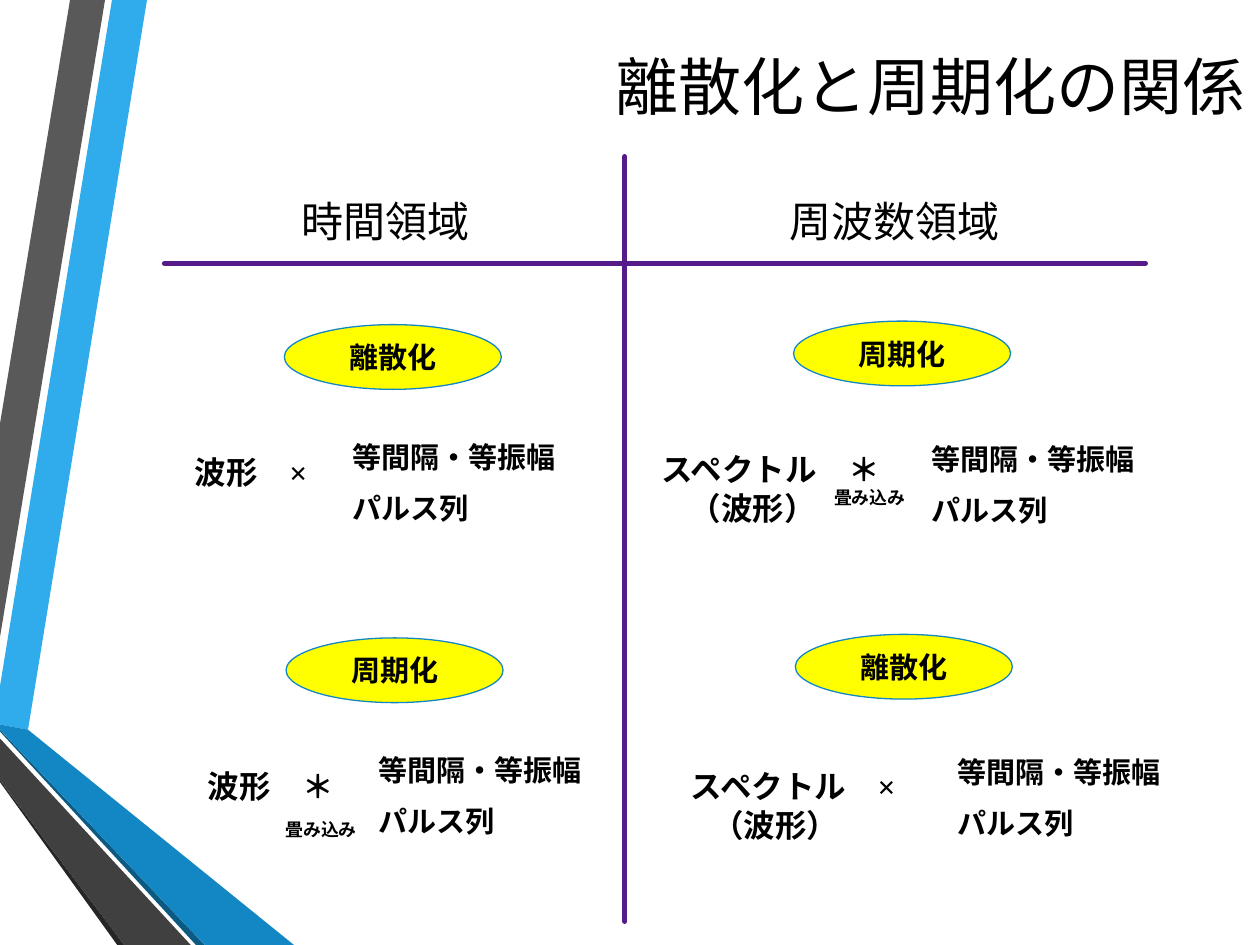
import pptx
import pptx.util
import pptx.dml.color
import pptx.enum.shapes
import pptx.enum.text
import pptx.oxml
import pptx.oxml.ns

Pt = pptx.util.Pt
RGB = pptx.dml.color.RGBColor
ALIGN = pptx.enum.text.PP_ALIGN
ANCHOR = pptx.enum.text.MSO_ANCHOR

BLACK = RGB(0x00, 0x00, 0x00)
YELLOW = RGB(0xFF, 0xFF, 0x00)
PURPLE = RGB(0x54, 0x1B, 0x89)
LIGHT_BLUE = RGB(0x30, 0xAC, 0xEC)
BLUE = RGB(0x12, 0x87, 0xC3)
DARK_BLUE = RGB(0x0C, 0x5A, 0x82)
GRAY = RGB(0x59, 0x59, 0x59)
DARK_GRAY = RGB(0x40, 0x40, 0x40)
NEAR_BLACK = RGB(0x26, 0x26, 0x26)

# Ribbon outlines on the left edge, back to front
RIBBONS = [
    (LIGHT_BLUE, [(0, 391.7), (0, 414), (16, 416.9), (84.4, 0), (64.2, 0)]),
    (GRAY, [(59.8, 0), (39.7, 0), (0, 242), (0, 364.3)]),
    (NEAR_BLACK, [(0, 445.5), (0, 447.3), (67, 540), (71.3, 540)]),
    (DARK_BLUE, [(0, 416.9), (0, 417.7), (112.4, 540), (117.3, 540)]),
    (BLUE, [(0, 416.9), (117.3, 540), (167.8, 540), (16, 416.9), (0, 414)]),
    (DARK_GRAY, [(0, 445.5), (71.3, 540), (108.7, 540), (0, 422)]),
]


def add_ribbon(s, color, points):
    fb = s.shapes.build_freeform(*points[0], scale=float(Pt(1)))
    fb.add_line_segments(points[1:], close=True)
    sp = fb.convert_to_shape()
    sp.shadow.inherit = False
    sp.fill.solid()
    sp.fill.fore_color.rgb = color
    sp.line.fill.background()


def write_text(sp, text, size, align, bold=True, font="Times New Roman"):
    tf = sp.text_frame
    tf.word_wrap = True
    tf.text = text
    for p in tf.paragraphs:
        p.alignment = align
        p.space_before = Pt(round(size * 0.2, 1))
        p.space_after = Pt(6)
        for r in p.runs:
            r.font.size = Pt(size)
            r.font.name = font
            r.font.bold = bold
            r.font.color.rgb = BLACK


def add_text(s, text, left, top, width, height, size, align=ALIGN.CENTER, **style):
    sp = s.shapes.add_textbox(Pt(left), Pt(top), Pt(width), Pt(height))
    write_text(sp, text, size, align, **style)
    return sp


def add_operation(s, text, left, top):
    sp = s.shapes.add_shape(pptx.enum.shapes.MSO_SHAPE.OVAL,
                            Pt(left), Pt(top), Pt(124), Pt(37))
    sp.shadow.inherit = False
    sp.fill.solid()
    sp.fill.fore_color.rgb = YELLOW
    sp.line.color.rgb = BLUE
    sp.line.width = Pt(0.75)
    write_text(sp, text, 16.6, ALIGN.CENTER)


def add_pulse_train(s, left, top):
    add_text(s, "等間隔・等振幅\nパルス列", left, top, 149, 52.5, 16.6, ALIGN.LEFT)


def add_convolution_label(s, left, top):
    add_text(s, "畳み込み", left, top, 78, 23, 10.2)


def add_term(s, text, left, top, width=157.5):
    add_text(s, text, left, top, width, 28, 18)


def add_spectrum(s, operator, left, top):
    add_term(s, "スペクトル　" + operator, left, top)
    add_term(s, "（波形）", left + 9.5, top + 22.5, 118)


def add_divider(s, x1, y1, x2, y2):
    line = s.shapes.add_connector(pptx.enum.shapes.MSO_CONNECTOR.STRAIGHT,
                                  Pt(x1), Pt(y1), Pt(x2), Pt(y2))
    line.line.color.rgb = PURPLE
    line.line.width = Pt(3)
    line.line._get_or_add_ln().set("cap", "rnd")
    props = line._element.spPr
    props.append(pptx.oxml.parse_xml(
        "<a:effectLst %s/>" % pptx.oxml.ns.nsdecls("a")))


def main():
    prs = pptx.Presentation()
    prs.slide_width, prs.slide_height = Pt(720), Pt(540)
    s = prs.slides.add_slide(prs.slide_layouts[6])

    for color, points in RIBBONS:
        add_ribbon(s, color, points)

    # Title and column headings
    title = add_text(s, "離散化と周期化の関係", 84, 8.5, 635, 81, 36,
                     ALIGN.RIGHT, bold=False, font="Calibri")
    title.text_frame.vertical_anchor = ANCHOR.MIDDLE
    title.text_frame.paragraphs[0].space_before = Pt(0)
    title.text_frame.paragraphs[0].space_after = Pt(0)
    add_text(s, "時間領域", 76, 108, 199.5, 35, 24, ALIGN.RIGHT, bold=False)
    add_text(s, "周波数領域", 444, 108, 199.5, 35, 24, ALIGN.LEFT, bold=False)

    # Sampling in time: product becomes convolution
    add_operation(s, "離散化", 162.5, 185.5)
    add_term(s, "波形　×", 84.5, 255.5, 118)
    add_pulse_train(s, 194.5, 247.5)
    add_operation(s, "周期化", 453.5, 183.5)
    add_spectrum(s, "＊", 361.5, 253.5)
    add_convolution_label(s, 458, 274.5)
    add_pulse_train(s, 525.5, 248.5)

    # Periodic in time: convolution becomes product
    add_operation(s, "周期化", 163.5, 364.5)
    add_term(s, "波形　＊", 76, 434.5)
    add_convolution_label(s, 144.5, 464)
    add_pulse_train(s, 209.5, 426.5)
    add_operation(s, "離散化", 454.5, 362.5)
    add_spectrum(s, "×", 374.5, 434.5)
    add_pulse_train(s, 540, 427.5)

    # Cross that separates the domains and the headings
    add_divider(s, 357, 89.5, 357, 526.5)
    add_divider(s, 94, 150.5, 654.5, 150.5)

    prs.save("out.pptx")


if __name__ == "__main__":
    main()
